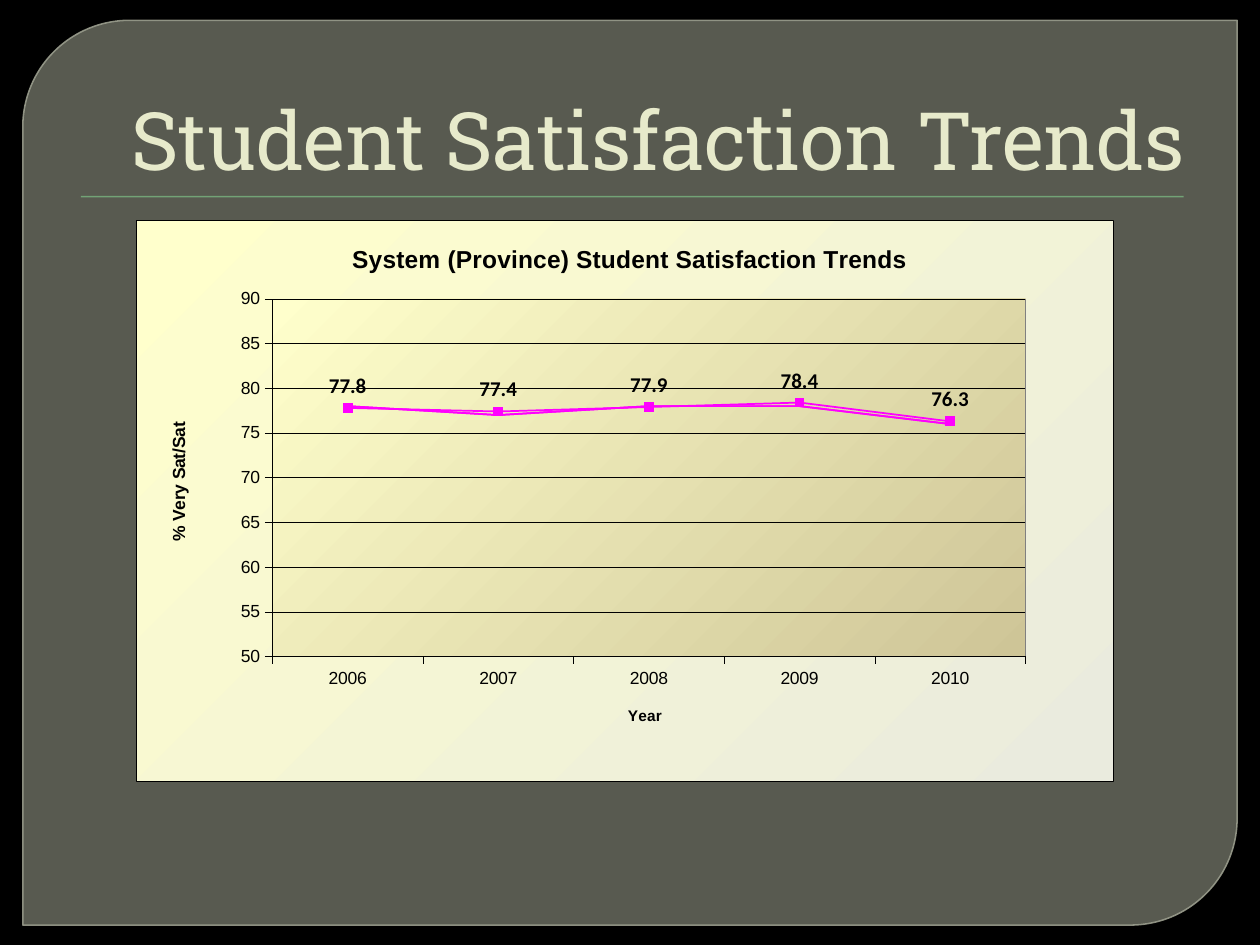
from lxml import etree
from pptx import Presentation
from pptx.chart.data import CategoryChartData
from pptx.dml.color import RGBColor
from pptx.enum.chart import XL_CHART_TYPE as ChartType, XL_LABEL_POSITION as LabelPosition
from pptx.enum.chart import XL_MARKER_STYLE as MarkerStyle, XL_TICK_MARK as TickMark
from pptx.enum.shapes import MSO_SHAPE as Preset
from pptx.enum.text import MSO_ANCHOR as Anchor, PP_ALIGN as Align
from pptx.oxml import parse_xml
from pptx.oxml.ns import nsdecls, qn
from pptx.util import Cm, Pt

BLACK = RGBColor(0x00, 0x00, 0x00)
PANEL = RGBColor(0x88, 0x8B, 0x7B)
PANEL_EDGE = RGBColor(0x9D, 0xA0, 0x90)
GREEN = RGBColor(0x72, 0xA3, 0x76)
CREAM = RGBColor(0xE7, 0xEA, 0xCB)
YELLOW = RGBColor(0xFF, 0xFF, 0xCC)
PALE = RGBColor(0xEA, 0xEB, 0xDE)
SAND = RGBColor(0xCE, 0xC5, 0x97)
GRAY = RGBColor(0x80, 0x80, 0x80)
MAGENTA = RGBColor(0xFF, 0x00, 0xFF)

YEARS = ["2006", "2007", "2008", "2009", "2010"]
SATISFACTION = [77.8, 77.4, 77.9, 78.4, 76.3]
ROUNDED = [round(value) for value in SATISFACTION]


def set_font(font, size, name="Arial", color=BLACK, bold=False):
    font.size, font.name, font.bold = Pt(size), name, bold
    font.color.rgb = color


def write_text(frame, text, align=None, **font_format):
    paragraph = frame.paragraphs[0]
    paragraph.alignment = align
    run = paragraph.add_run()
    run.text = text
    set_font(run.font, **font_format)


def set_alpha(fill, percent):
    color = fill._xPr.find(".//" + qn("a:srgbClr"))
    etree.SubElement(color, qn("a:alpha")).set("val", str(percent * 1000))


def make_layout(parent, **values):
    """Replace the automatic layout of a chart part and return the new one."""
    for layout in parent.findall(qn("c:layout")):
        parent.remove(layout)
    items = "".join(f'<c:{key} val="{value}"/>' for key, value in values.items())
    return parse_xml(f'<c:layout {nsdecls("c")}><c:manualLayout>{items}'
                     '</c:manualLayout></c:layout>')


def gradient_properties(start, end, border):
    """Shape properties with a diagonal gradient and a thin border."""
    return parse_xml(
        f'<c:spPr {nsdecls("c", "a")}><a:gradFill><a:gsLst>'
        f'<a:gs pos="0"><a:srgbClr val="{start}"/></a:gs>'
        f'<a:gs pos="100000"><a:srgbClr val="{end}"/></a:gs></a:gsLst>'
        '<a:lin ang="2700000" scaled="0"/></a:gradFill>'
        f'<a:ln w="3175"><a:solidFill><a:srgbClr val="{border}"/></a:solidFill></a:ln></c:spPr>')


class SlideBuilder:
    title_font = "Roboto Slab"
    thin = Pt(0.25)

    def __init__(self, presentation):
        self.slide = presentation.slides.add_slide(presentation.slide_layouts[6])
        background = self.slide.background.fill
        background.solid()
        background.fore_color.rgb = BLACK

    def shape(self, preset, box, fill):
        shape = self.slide.shapes.add_shape(preset, *map(Cm, box))
        shape.shadow.inherit = False
        shape.fill.solid()
        shape.fill.fore_color.rgb = fill
        shape.line.fill.background()
        return shape

    def panel(self, box):
        panel = self.shape(Preset.ROUND_2_DIAG_RECTANGLE, box, PANEL)
        panel.adjustments[0] = 0.118
        panel.adjustments[1] = 0
        panel.line.color.rgb = PANEL_EDGE
        panel.line.width = Pt(0.87)
        set_alpha(panel.fill, 65)
        set_alpha(panel.line.fill, 88)

    def title(self, box, text):
        frame = self.slide.shapes.add_textbox(*map(Cm, box)).text_frame
        frame.word_wrap = True
        frame.vertical_anchor = Anchor.BOTTOM
        write_text(frame, text, Align.RIGHT, size=46, name=self.title_font, color=CREAM)

    def chart_title(self, owner, element_of, text, size, x, y):
        """Add a bold title at a place given as fractions of the chart."""
        owner.has_title = True
        title = element_of(owner)
        write_text(title.text_frame, text, size=size, bold=True)
        layout = make_layout(title._element, xMode="edge", yMode="edge", x=x, y=y)
        title._element.find(qn("c:tx")).addnext(layout)

    def axis(self, axis):
        axis.major_tick_mark = TickMark.OUTSIDE
        axis.minor_tick_mark = TickMark.NONE
        axis.format.line.color.rgb = BLACK
        axis.format.line.width = self.thin
        set_font(axis.tick_labels.font, 10)

    def series(self, series):
        series.smooth = False
        series.format.line.color.rgb = MAGENTA
        series.format.line.width = Pt(1)
        series.marker.style = MarkerStyle.NONE

    def labelled_series(self, series):
        marker = series.marker
        marker.style, marker.size = MarkerStyle.SQUARE, 5
        marker.format.fill.solid()
        marker.format.fill.fore_color.rgb = MAGENTA
        marker.format.line.color.rgb = MAGENTA
        labels = series.data_labels
        labels.show_value = True
        labels.position = LabelPosition.ABOVE
        labels.number_format, labels.number_format_is_linked = "0.0", False
        set_font(labels.font, 12, "Calibri", bold=True)

    def line_chart(self, box):
        data = CategoryChartData()
        data.categories = YEARS
        for number, values in enumerate((SATISFACTION, ROUNDED, ROUNDED), 1):
            data.add_series(f"Series {number}", values)
        chart = self.slide.shapes.add_chart(ChartType.LINE_MARKERS, *map(Cm, box), data).chart
        chart.has_legend = False
        set_font(chart.font, 9.5)

        # Titles
        for owner, element_of, *place in (
            (chart, lambda item: item.chart_title,
             "System (Province) Student Satisfaction Trends", 14, 0.216, 0.032),
            (chart.category_axis, lambda item: item.axis_title, "Year", 8.75, 0.5, 0.86),
            (chart.value_axis, lambda item: item.axis_title, "% Very Sat/Sat", 10, 0.028, 0.354),
        ):
            self.chart_title(owner, element_of, *place)

        # Axes
        self.axis(chart.category_axis)
        value_axis = chart.value_axis
        self.axis(value_axis)
        value_axis.minimum_scale, value_axis.maximum_scale = 50, 90
        value_axis.major_unit = 5
        value_axis.has_major_gridlines = True
        value_axis.major_gridlines.format.line.color.rgb = BLACK
        value_axis.major_gridlines.format.line.width = self.thin
        value_axis.tick_labels.number_format = "0"
        value_axis.tick_labels.number_format_is_linked = False

        # Series
        plot = chart.plots[0]
        plot.vary_by_categories = False
        for series in plot.series:
            self.series(series)
        self.labelled_series(plot.series[0])

        # Backgrounds and plot position
        chart_element = chart._chartSpace.find(qn("c:chart"))
        chart_element.addnext(gradient_properties(YELLOW, PALE, BLACK))
        plot_area = chart_element.find(qn("c:plotArea"))
        plot_area.insert(0, make_layout(plot_area, layoutTarget="inner", xMode="edge",
                                        yMode="edge", x=0.139, y=0.14, w=0.771, h=0.638))
        plot_area.append(gradient_properties(YELLOW, SAND, GRAY))


def main():
    presentation = Presentation()
    presentation.slide_width, presentation.slide_height = Cm(25.4), Cm(19.05)
    builder = SlideBuilder(presentation)

    # Frame and heading
    builder.panel((0.46, 0.41, 24.48, 18.24))
    builder.shape(Preset.RECTANGLE, (1.63, 3.95, 22.23, 0.03), GREEN)
    builder.title((1.27, 0.71, 22.86, 3.18), "Student Satisfaction Trends")

    # Trend chart
    builder.line_chart((2.75, 4.44, 19.7, 11.31))
    presentation.save("out.pptx")


if __name__ == "__main__":
    main()
